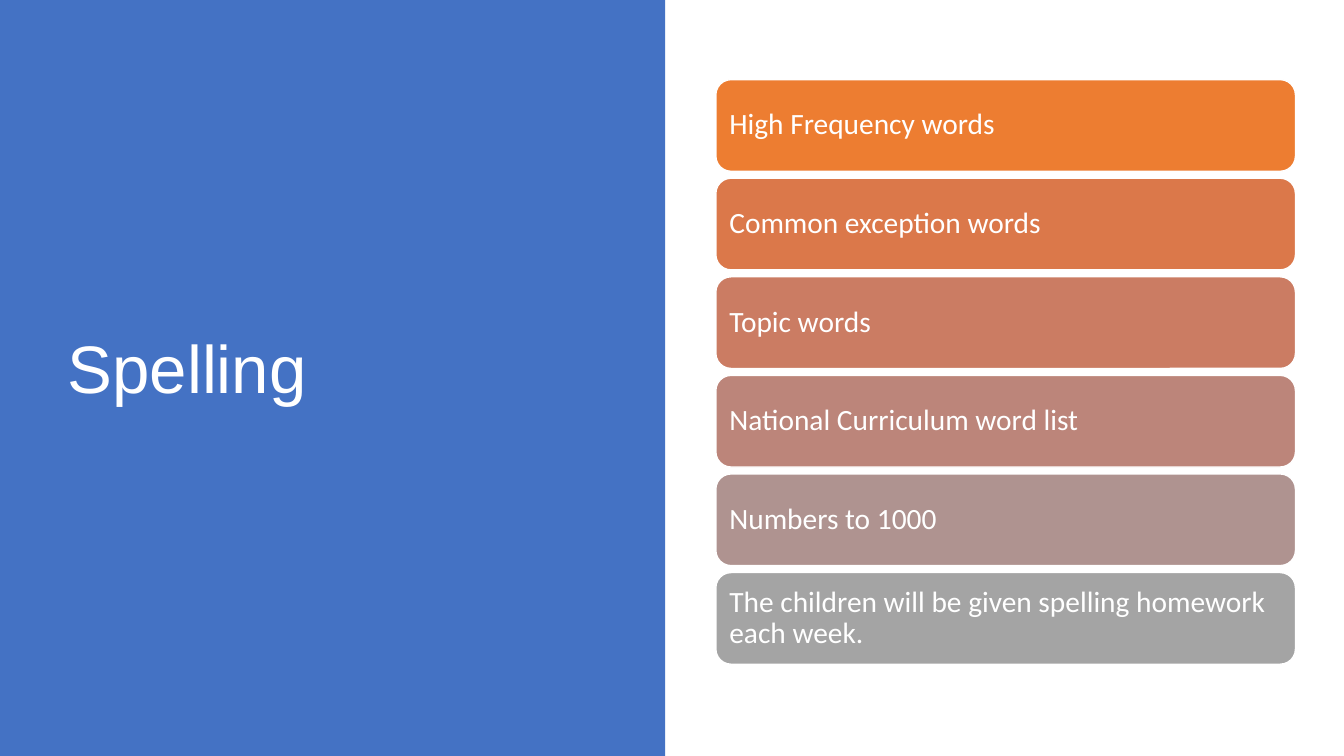
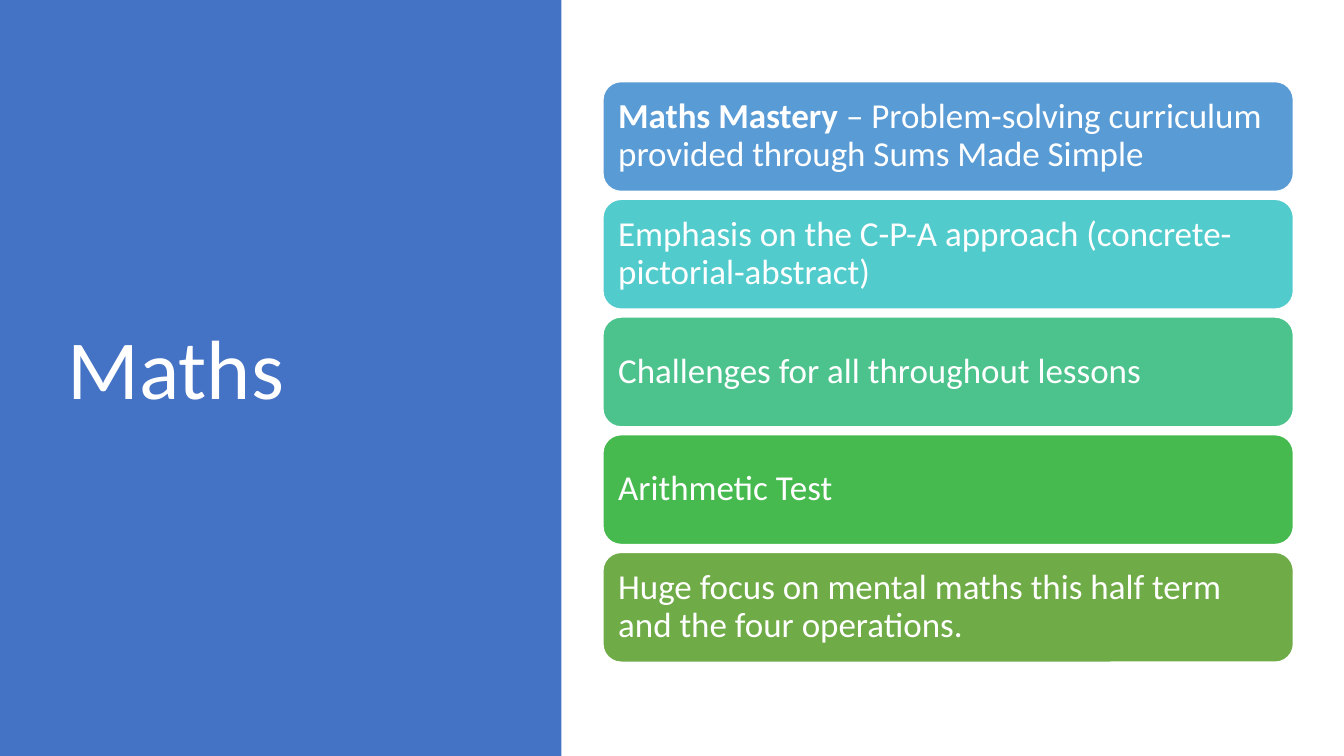
"""Build two slides, each with a title panel and a stack of coloured bars."""
from pptx import Presentation
from pptx.dml.color import RGBColor
from pptx.enum.shapes import MSO_SHAPE
from pptx.enum.text import MSO_ANCHOR, MSO_AUTO_SIZE, PP_ALIGN
from pptx.util import Inches, Pt

WHITE = RGBColor(0xFF, 0xFF, 0xFF)
PANEL_BLUE = RGBColor(0x44, 0x72, 0xC4)
ORANGE_TO_GREY = [
    RGBColor(0xED, 0x7D, 0x31),
    RGBColor(0xDB, 0x78, 0x4A),
    RGBColor(0xCB, 0x7C, 0x63),
    RGBColor(0xBC, 0x85, 0x7A),
    RGBColor(0xAF, 0x93, 0x90),
    RGBColor(0xA4, 0xA4, 0xA4),
]
BLUE_TO_GREEN = [
    RGBColor(0x59, 0x9B, 0xD5),
    RGBColor(0x52, 0xCB, 0xCC),
    RGBColor(0x4C, 0xC3, 0x8C),
    RGBColor(0x46, 0xBA, 0x4E),
    RGBColor(0x6F, 0xAB, 0x46),
]

TITLE_LEFT, TITLE_TOP, TITLE_HEIGHT = 4.28, 9.07, 80.27

SLIDES = [
    {
        "title": "Spelling", "title_font": "Arial", "title_size": 48,
        "title_width": 42.53, "panel_width": 49.5,
        "bar_left": 53.26, "bar_width": 43.13, "bar_height": 12.13,
        "stack_top": 10.53, "stack_height": 77.33,
        "text_size": 21, "inset": 0.09, "colours": ORANGE_TO_GREY,
        "bars": [
            ("", "High Frequency words"),
            ("", "Common exception words"),
            ("", "Topic words"),
            ("", "National Curriculum word list"),
            ("", "Numbers to 1000"),
            ("", "The children will be given spelling homework each week."),
        ],
    },
    {
        "title": "Maths", "title_font": "Calibri", "title_size": 60,
        "title_width": 31.2, "panel_width": 41.78,
        "bar_left": 44.86, "bar_width": 51.38, "bar_height": 14.53,
        "stack_top": 10.8, "stack_height": 76.8,
        "text_size": 25, "inset": 0.1, "colours": BLUE_TO_GREEN,
        "bars": [
            ("Maths Mastery ",
             "– Problem-solving curriculum provided through Sums Made Simple"),
            ("", "Emphasis on the C-P-A approach (concrete-pictorial-abstract)"),
            ("", "Challenges for all throughout lessons"),
            ("", "Arithmetic Test"),
            ("", "Huge focus on mental maths this half term and the four operations."),
        ],
    },
]

deck = Presentation()
deck.slide_width, deck.slide_height = Inches(13.33), Inches(7.5)


def place(left, top, width, height):
    """Turn percentages of the slide's size into lengths."""
    return (
        int(deck.slide_width * left / 100), int(deck.slide_height * top / 100),
        int(deck.slide_width * width / 100), int(deck.slide_height * height / 100),
    )


def style_text(shape, font_name, size):
    """Set white, left-aligned, vertically centred text."""
    frame = shape.text_frame
    frame.word_wrap = True
    frame.auto_size = MSO_AUTO_SIZE.NONE
    frame.vertical_anchor = MSO_ANCHOR.MIDDLE
    for para in frame.paragraphs:
        para.alignment = PP_ALIGN.LEFT
        para.line_spacing = 0.9
        for span in para.runs:
            span.font.name = font_name
            span.font.size = Pt(size)
            span.font.color.rgb = WHITE


for content in SLIDES:
    page = deck.slides.add_slide(deck.slide_layouts.get_by_name("Title Only"))

    panel = page.shapes.add_shape(
        MSO_SHAPE.RECTANGLE, *place(0, 0, content["panel_width"], 100))
    panel.shadow.inherit = False
    panel.fill.solid()
    panel.fill.fore_color.rgb = PANEL_BLUE
    panel.line.fill.background()

    title = page.shapes.title
    title.element.addprevious(panel.element)
    title.left, title.top, title.width, title.height = place(
        TITLE_LEFT, TITLE_TOP, content["title_width"], TITLE_HEIGHT)
    title.text_frame.text = content["title"]
    style_text(title, content["title_font"], content["title_size"])

    bar_height = content["bar_height"]
    pitch = (content["stack_height"] - bar_height) / (len(content["bars"]) - 1)
    for row, (lead, text) in enumerate(content["bars"]):
        bar = page.shapes.add_shape(
            MSO_SHAPE.ROUNDED_RECTANGLE,
            *place(content["bar_left"], content["stack_top"] + row * pitch,
                   content["bar_width"], bar_height))
        bar.shadow.inherit = False
        bar.fill.solid()
        bar.fill.fore_color.rgb = content["colours"][row]
        bar.line.color.rgb = WHITE
        bar.line.width = Pt(1)

        frame = bar.text_frame
        frame.margin_left = frame.margin_right = Inches(content["inset"])
        frame.margin_top = frame.margin_bottom = Inches(content["inset"])
        para = frame.paragraphs[0]
        if lead:
            span = para.add_run()
            span.text = lead
            span.font.bold = True
        para.add_run().text = text
        style_text(bar, "Calibri", content["text_size"])

deck.save("out.pptx")
